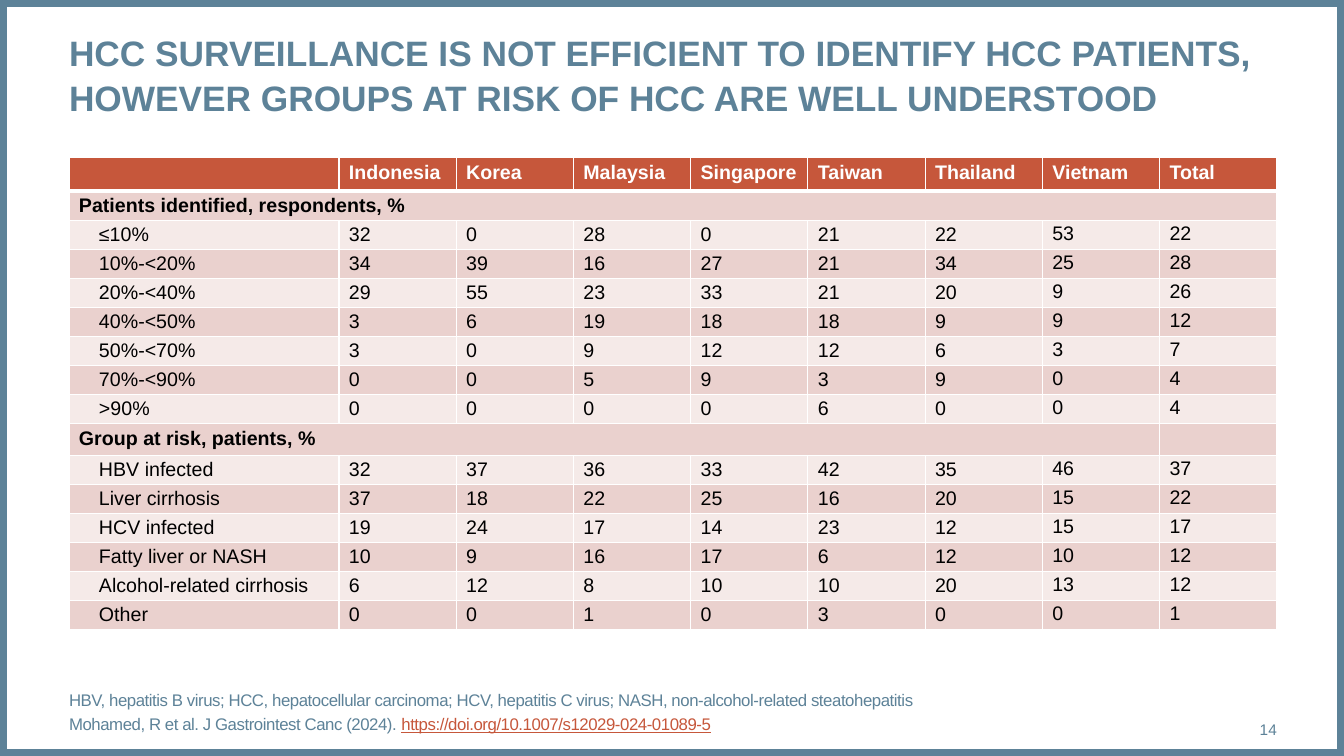
from lxml import etree
from pptx import Presentation
from pptx.dml.color import RGBColor
from pptx.enum.shapes import MSO_SHAPE
from pptx.enum.text import MSO_ANCHOR, MSO_AUTO_SIZE, PP_ALIGN
from pptx.oxml.ns import qn
from pptx.util import Pt

RECT = MSO_SHAPE.RECTANGLE
TOP, MIDDLE = MSO_ANCHOR.TOP, MSO_ANCHOR.MIDDLE
LEFT, RIGHT = PP_ALIGN.LEFT, PP_ALIGN.RIGHT
NO_FIT = MSO_AUTO_SIZE.NONE

FONT = "Arial"
COLORS = {
    "blue": "5D8298",
    "rust": "C6573B",
    "dark_band": "EAD1CE",
    "light_band": "F5EAE8",
    "white": "FFFFFF",
    "black": "000000",
}

TITLE = ("HCC SURVEILLANCE IS NOT EFFICIENT TO IDENTIFY HCC PATIENTS, "
         "HOWEVER GROUPS AT RISK OF HCC ARE WELL UNDERSTOOD")
HEADER = ["", "Indonesia", "Korea", "Malaysia", "Singapore", "Taiwan",
          "Thailand", "Vietnam", "Total"]
ROWS = [
    ["Patients identified, respondents, %"],
    ["≤10%", 32, 0, 28, 0, 21, 22, 53, 22],
    ["10%-<20%", 34, 39, 16, 27, 21, 34, 25, 28],
    ["20%-<40%", 29, 55, 23, 33, 21, 20, 9, 26],
    ["40%-<50%", 3, 6, 19, 18, 18, 9, 9, 12],
    ["50%-<70%", 3, 0, 9, 12, 12, 6, 3, 7],
    ["70%-<90%", 0, 0, 5, 9, 3, 9, 0, 4],
    [">90%", 0, 0, 0, 0, 6, 0, 0, 4],
    ["Group at risk, patients, %"],
    ["HBV infected", 32, 37, 36, 33, 42, 35, 46, 37],
    ["Liver cirrhosis", 37, 18, 22, 25, 16, 20, 15, 22],
    ["HCV infected", 19, 24, 17, 14, 23, 12, 15, 17],
    ["Fatty liver or NASH", 10, 9, 16, 17, 6, 12, 10, 12],
    ["Alcohol-related cirrhosis", 6, 12, 8, 10, 10, 20, 13, 12],
    ["Other", 0, 0, 1, 0, 3, 0, 0, 1],
]
HEIGHTS = [33, 30] + [29] * 7 + [31] + [29] * 6
SPANS = {1: 9, 9: 8}
NOTES = [
    [("HBV, hepatitis B virus; HCC, hepatocellular carcinoma; HCV, hepatitis C virus; "
      "NASH, non-alcohol-related steatohepatitis", "blue", False)],
    [("Mohamed, R et al. J Gastrointest Canc (2024). ", "blue", False),
     ("https://doi.org/10.1007/s12029-024-01089-5", "rust", True)],
]


def px(n):
    return round(n * 914400 / 100.8)


def rgb(name):
    return RGBColor.from_string(COLORS[name])


class SlideBuilder:
    def __init__(self, prs):
        self.s = prs.slides.add_slide(prs.slide_layouts[1])

    def run(self, p, text, size, color, bold=False):
        r = p.add_run()
        r.text = text
        r.font.name = FONT
        r.font.size = Pt(size)
        r.font.bold = bold
        r.font.color.rgb = rgb(color)
        return r

    def frame(self, sp, box, anchor):
        sp.left, sp.top, sp.width, sp.height = map(px, box)
        tf = sp.text_frame
        tf.auto_size = NO_FIT
        tf.word_wrap = True
        tf.vertical_anchor = anchor
        tf.margin_left = tf.margin_top = tf.margin_right = tf.margin_bottom = 0
        return tf

    def border(self, width, height):
        sp = self.s.shapes.add_shape(RECT, 0, 0, px(width), px(height))
        sp.shadow.inherit = False
        sp.fill.background()
        sp.line.color.rgb = rgb("blue")
        sp.line.width = Pt(10)

    def title(self, text, box):
        p = self.frame(self.s.shapes.title, box, TOP).paragraphs[0]
        p.alignment = LEFT
        p.line_spacing = 1.07
        self.run(p, text, 25.2, "blue", True)

    def notes(self, lines, box):
        tf = self.frame(self.s.placeholders[1], box, MIDDLE)
        for i, line in enumerate(lines):
            p = tf.add_paragraph() if i else tf.paragraphs[0]
            p.space_before = Pt(3 if i else 0)
            pPr = p._p.get_or_add_pPr()
            pPr.set("marL", "0")
            pPr.set("indent", "0")
            etree.SubElement(pPr, qn("a:buNone"))
            for text, color, underline in line:
                r = self.run(p, text, 12, color)
                r.font.underline = underline
                r._r.get_or_add_rPr().set("spc", "-30")

    def page_number(self, text, box):
        sp = self.s.shapes.add_textbox(0, 0, 0, 0)
        p = self.frame(sp, box, MIDDLE).paragraphs[0]
        p.alignment = RIGHT
        self.run(p, text, 11, "blue")

    def cell_borders(self, cell, top, bottom):
        tcPr = cell._tc.get_or_add_tcPr()
        for side, width in zip("LRTB", (1, 1, top, bottom)):
            ln = etree.SubElement(tcPr, qn("a:ln" + side), w=str(Pt(width)))
            fill = etree.SubElement(ln, qn("a:solidFill"))
            etree.SubElement(fill, qn("a:srgbClr"), val=COLORS["white"])

    def cell(self, cell, i, j, text):
        header = i == 0
        section = i in SPANS
        self.cell_borders(cell, 3 if i == 1 else 1, 3 if header else 1)
        band = "rust" if header else "dark_band" if i % 2 else "light_band"
        cell.fill.solid()
        cell.fill.fore_color.rgb = rgb(band)
        centred = not header and j < 7
        cell.vertical_anchor = MIDDLE if centred else TOP
        cell.margin_left = cell.margin_right = px(10)
        cell.margin_top = px(5 if header else 4)
        cell.margin_bottom = px(5 if header else 3 if centred else 4)
        p = cell.text_frame.paragraphs[0]
        if not header:
            p.line_spacing = 0.9
        if j == 0 and not header and not section:
            p._p.get_or_add_pPr().set("indent", str(px(20)))
        if text:
            self.run(p, text, 14, "white" if header else "black", header or section)
        else:
            etree.SubElement(p._p, qn("a:endParaRPr"), sz="1400")

    def table(self, rows, heights, label_width, box):
        x, y, w, h = map(px, box)
        columns = len(rows[0])
        tbl = self.s.shapes.add_table(len(rows), columns, x, y, w, h).table
        for j, column in enumerate(tbl.columns):
            column.width = px((box[2] - label_width) / (columns - 1) if j else label_width)
        for i, values in enumerate(rows):
            tbl.rows[i].height = px(heights[i])
            for j in range(columns):
                text = str(values[j]) if j < len(values) else ""
                self.cell(tbl.cell(i, j), i, j, text)
        for i, span in SPANS.items():
            tbl.cell(i, 0).merge(tbl.cell(i, span - 1))


def main():
    prs = Presentation()
    prs.slide_width, prs.slide_height = px(1344), px(756)
    slide = SlideBuilder(prs)
    slide.border(1344, 756)
    slide.table([HEADER] + ROWS, HEIGHTS, 270, (69, 157, 1208, sum(HEIGHTS)))
    slide.title(TITLE, (69, 28, 1208, 101))
    slide.notes(NOTES, (69, 690, 1122, 43))
    slide.page_number("14", (1190, 709, 87, 40))
    prs.save("out.pptx")


if __name__ == "__main__":
    main()
